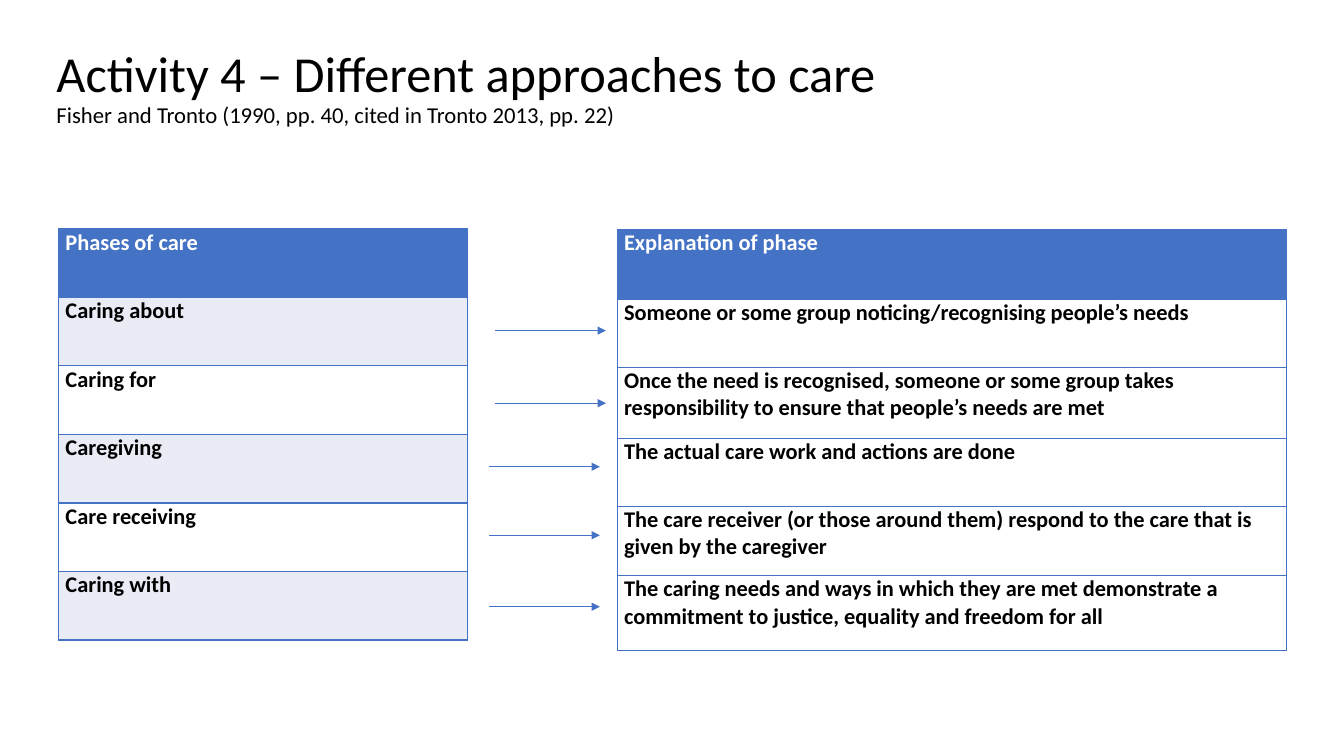
from pptx import Presentation
from pptx.dml.color import RGBColor
from pptx.enum.shapes import MSO_CONNECTOR
from pptx.enum.text import MSO_ANCHOR, PP_ALIGN
from pptx.oxml.ns import qn
from pptx.util import Inches, Pt
from lxml.etree import SubElement

FONT = "Calibri"
BLUE, PALE, WHITE, BLACK = "4472C4", "E9EBF5", "FFFFFF", "000000"

PHASES = ["Phases of care", "Caring about", "Caring for", "Caregiving",
          "Care receiving", "Caring with"]
EXPLANATIONS = [
    "Explanation of phase",
    "Someone or some group noticing/recognising people’s needs",
    "Once the need is recognised, someone or some group takes "
    "responsibility to ensure that people’s needs are met",
    "The actual care work and actions are done",
    "The care receiver (or those around them) respond to the care that is "
    "given by the caregiver",
    "The caring needs and ways in which they are met demonstrate a "
    "commitment to justice, equality and freedom for all",
]
EXPLANATION_HEIGHTS = [0.7, 0.67, 0.71, 0.67, 0.69, 0.74]
ARROWS = [(4.91, 3.28), (4.91, 4), (4.85, 4.63), (4.85, 5.31), (4.85, 6.02)]
ARROW_LENGTH = 1.1


def color(hex_code):
    return RGBColor.from_string(hex_code)


def add_heading(slide, left, top, width, height):
    heading = slide.shapes.title
    heading.left, heading.top = Inches(left), Inches(top)
    heading.width, heading.height = Inches(width), Inches(height)
    frame = heading.text_frame
    frame.word_wrap = True
    frame.vertical_anchor = MSO_ANCHOR.TOP
    frame.margin_top = 0
    paragraph = frame.paragraphs[0]
    paragraph.alignment = PP_ALIGN.LEFT
    paragraph.line_spacing = 0.9
    paragraph.font.name = FONT
    paragraph.font.color.rgb = color(BLACK)

    topic = paragraph.add_run()
    topic.text = "Activity 4 – Different approaches to care"
    topic.font.size = Pt(36)
    paragraph.add_line_break()
    citation = paragraph.add_run()
    citation.text = "Fisher and Tronto (1990, pp. 40, cited in Tronto 2013, pp. 22)"
    citation.font.size = Pt(16.2)


def set_borders(cell, weight):
    properties = cell._tc.get_or_add_tcPr()
    for side in ("a:lnL", "a:lnR", "a:lnT", "a:lnB"):
        border = SubElement(properties, qn(side), w=str(Pt(weight)))
        SubElement(SubElement(border, qn("a:solidFill")), qn("a:srgbClr"), val=BLUE)


def add_column(slide, left, top, width, heights, texts, band, weight):
    """A one-column table: blue header, then rows alternating band and white."""
    table = slide.shapes.add_table(
        len(texts), 1, Inches(left), Inches(top),
        Inches(width), Inches(sum(heights))).table
    table.columns[0].width = Inches(width)
    for index, (text, height) in enumerate(zip(texts, heights)):
        table.rows[index].height = Inches(height)
        cell = table.cell(index, 0)
        cell.margin_left = cell.margin_right = Inches(0.07)
        cell.margin_top = cell.margin_bottom = 0
        set_borders(cell, weight)
        cell.fill.solid()
        body_fill = band if index % 2 else WHITE
        cell.fill.fore_color.rgb = color(body_fill if index else BLUE)
        cell.text = text
        font = cell.text_frame.paragraphs[0].font
        font.name, font.size, font.bold = FONT, Pt(16), True
        font.color.rgb = color(BLACK if index else WHITE)


def add_arrow(slide, left, y, length):
    arrow = slide.shapes.add_connector(
        MSO_CONNECTOR.STRAIGHT, Inches(left), Inches(y),
        Inches(left + length), Inches(y))
    arrow.line.color.rgb = color(BLUE)
    arrow.line.width = Pt(1)
    SubElement(arrow.line._get_or_add_ln(), qn("a:tailEnd"), type="triangle")
    SubElement(arrow._element.spPr, qn("a:effectLst"))


def main():
    presentation = Presentation()
    presentation.slide_width = Inches(13.33)
    presentation.slide_height = Inches(7.5)
    slide = presentation.slides.add_slide(presentation.slide_layouts[5])

    add_heading(slide, 0.46, 0.49, 11.5, 1.29)
    # Phases on the left, their explanations on the right
    add_column(slide, 0.58, 2.27, 4.06, [0.68] * len(PHASES), PHASES, PALE, 1)
    add_column(slide, 6.12, 2.27, 6.64, EXPLANATION_HEIGHTS, EXPLANATIONS, WHITE, 0.5)
    # One arrow from each phase to its explanation
    for left, y in ARROWS:
        add_arrow(slide, left, y, ARROW_LENGTH)

    presentation.save("out.pptx")


if __name__ == "__main__":
    main()
